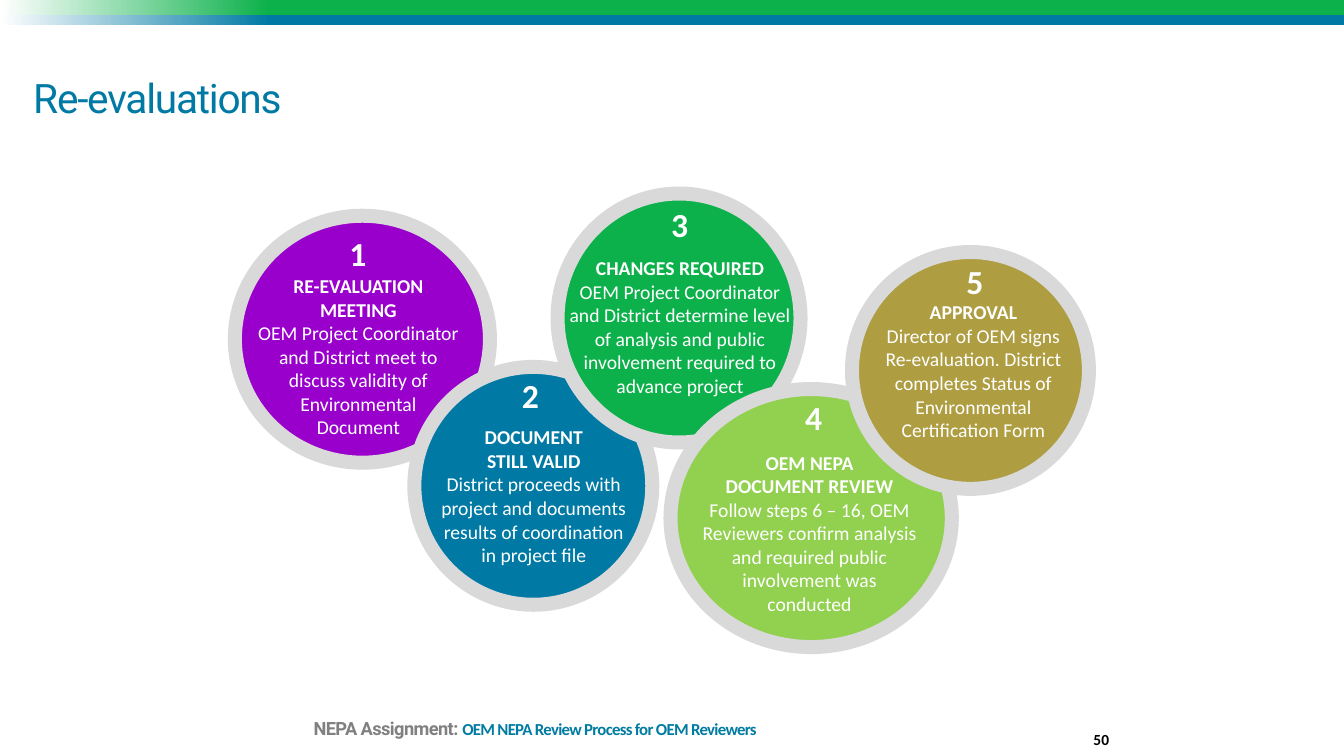
import pptx
import pptx.util
import pptx.dml.color
import pptx.enum.shapes
import pptx.enum.text

Inches, Pt = pptx.util.Inches, pptx.util.Pt
RGB = pptx.dml.color.RGBColor
SHAPE = pptx.enum.shapes.MSO_SHAPE
ALIGN = pptx.enum.text.PP_ALIGN
ANCHOR = pptx.enum.text.MSO_ANCHOR

COLORS = {
    "white": "FFFFFF", "black": "000000", "gray": "808080", "ring": "D9D9D9",
    "green": "0DB14B", "blue": "007AA4", "footer_blue": "007BA2",
    "purple": "9900CC", "lime": "92D050", "gold": "AE9D41",
}
BANDS = [("green", 0, 0.15), ("blue", 0.15, 0.1)]
TITLE = "Re-evaluations"
FOOTER = [
    ("NEPA Assignment: ", "Roboto", 13, "gray", True, -0.4),
    ("OEM NEPA Review Process for OEM Reviewers", "Calibri", 12, "footer_blue", True, -0.5),
]
PAGE = "50"
STEPS = [
    {"fill": "purple", "circle": (2.33, 2.14, 2.53, 2.45),
     "number": (3.55, 2.26), "caption": (2.44, 2.67, 2.23, 1.75),
     "heading": ["RE-EVALUATION MEETING"],
     "body": "OEM Project Coordinator and District meet to discuss validity of "
             "Environmental\vDocument"},
    {"fill": "blue", "circle": (4.11, 3.64, 2.36, 2.36),
     "number": (5.26, 3.67), "caption": (4.18, 4.17, 2.23, 1.51),
     "heading": ["DOCUMENT", "STILL VALID"],
     "body": "District proceeds with project and documents results of coordination\v"
             "in project file"},
    {"fill": "green", "circle": (5.53, 1.92, 2.41, 2.47),
     "number": (6.74, 1.97), "caption": (5.53, 2.49, 2.43, 1.51),
     "heading": ["CHANGES REQUIRED"],
     "body": "OEM Project Coordinator and District determine level of analysis and "
             "public involvement required to advance project"},
    {"fill": "lime", "circle": (6.65, 3.86, 2.79, 2.56),
     "number": (8.07, 3.89), "caption": (6.75, 4.42, 2.56, 1.75),
     "heading": ["OEM NEPA", "DOCUMENT REVIEW"],
     "body": "Follow steps 6 – 16, OEM Reviewers confirm analysis and required "
             "public involvement was\vconducted"},
    {"fill": "gold", "circle": (8.45, 2.5, 2.35, 2.35),
     "number": (9.67, 2.54), "caption": (8.54, 2.93, 2.23, 1.51),
     "heading": ["APPROVAL"],
     "body": "Director of OEM signs\vRe-evaluation. District completes Status of "
             "Environmental Certification Form"},
]
NUMBER_SIZE = (0.37, 0.5)


def color(name):
    return RGB.from_string(COLORS[name])


def add_shape(slide, kind, box):
    shape = slide.shapes.add_shape(kind, *map(Inches, box))
    shape.shadow.inherit = False
    return shape


def add_band(slide, hue, top, height):
    band = add_shape(slide, SHAPE.RECTANGLE, (0, top, 13.33, height))
    band.line.fill.background()
    band.fill.gradient()
    band.fill.gradient_angle = 0
    for stop, name, position in zip(band.fill.gradient_stops, ("white", hue), (0, 0.2)):
        stop.color.rgb = color(name)
        stop.position = position


def add_circle(slide, step):
    circle = add_shape(slide, SHAPE.OVAL, step["circle"])
    circle.fill.solid()
    circle.fill.fore_color.rgb = color(step["fill"])
    circle.line.color.rgb = color("ring")
    circle.line.width = Pt(10)


def add_text(slide, box, paragraphs, align=ALIGN.LEFT, bottom=False, wrap=True, spacing=1.0):
    frame = slide.shapes.add_textbox(*map(Inches, box)).text_frame
    frame.word_wrap = wrap
    if bottom:
        frame.vertical_anchor = ANCHOR.BOTTOM
        frame.margin_left = frame.margin_right = frame.margin_top = frame.margin_bottom = 0
    frame.text = "\n".join("".join(run[0] for run in runs) for runs in paragraphs)
    for paragraph, runs in zip(frame.paragraphs, paragraphs):
        paragraph.alignment = align
        paragraph.line_spacing = spacing
        if len(runs) > 1:
            paragraph.clear()
            for text, *style in runs:
                paragraph.add_run().text = text
        for index, run in enumerate(paragraph.runs):
            text, font, size, hue, bold, tracking = runs[min(index, len(runs) - 1)]
            run.font.name = font
            run.font.size = Pt(size)
            run.font.bold = bold
            run.font.color.rgb = color(hue)
            if tracking:
                run.font._element.set("spc", str(round(tracking * 100)))


def add_step_text(slide, step, number):
    caption = [[(line, "Calibri", 14, "white", True, 0)] for line in step["heading"]]
    caption.append([(step["body"], "Calibri", 14, "white", False, 0)])
    add_text(slide, step["caption"], caption, ALIGN.CENTER)
    center, top = step["number"]
    width, height = NUMBER_SIZE
    add_text(slide, (center - width / 2, top, width, height),
             [[(str(number), "Calibri", 24, "white", True, 0)]], ALIGN.CENTER, wrap=False)


def main():
    deck = pptx.Presentation()
    deck.slide_width, deck.slide_height = Inches(13.33), Inches(7.5)
    slide = deck.slides.add_slide(deck.slide_layouts[6])
    for band in BANDS:
        add_band(slide, *band)
    add_text(slide, (3.11, 6.86, 7.21, 0.47), [FOOTER], bottom=True, spacing=0.8)
    add_text(slide, (0.33, 0.3, 12, 0.9),
             [[(TITLE, "Roboto", 29, "blue", False, -0.9)]], bottom=True, spacing=0.8)
    add_text(slide, (10.22, 7.03, 0.78, 0.4),
             [[(PAGE, "Calibri", 11, "black", True, 0)]], ALIGN.RIGHT, bottom=True)
    for step in STEPS:
        add_circle(slide, step)
    for number, step in enumerate(STEPS, 1):
        add_step_text(slide, step, number)
    deck.save("out.pptx")


if __name__ == "__main__":
    main()
